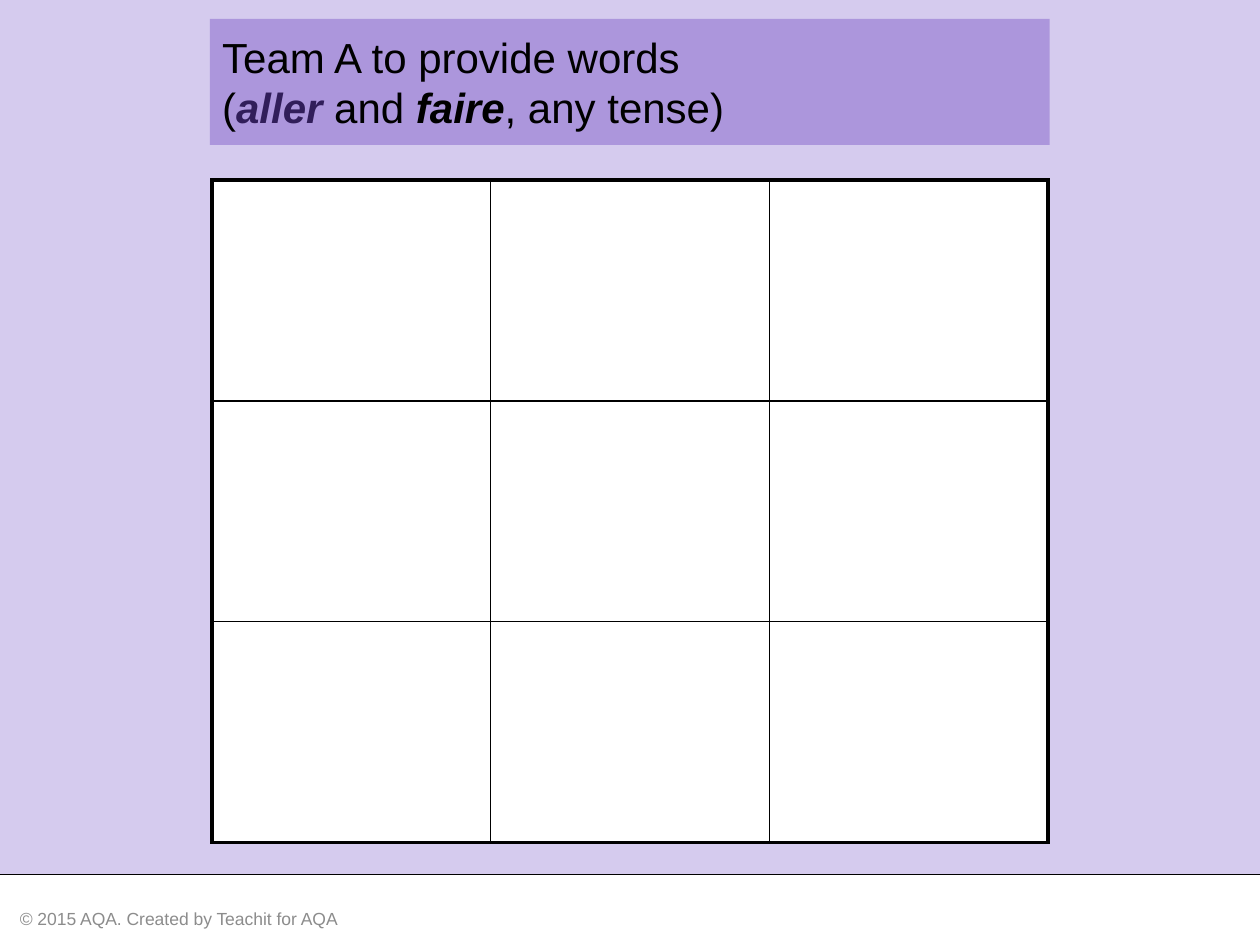
"""Build a noughts-and-crosses grid slide for a French verb game."""
from lxml.etree import SubElement
from pptx import Presentation
from pptx.dml.color import RGBColor
from pptx.enum.shapes import MSO_CONNECTOR as Connector, MSO_SHAPE as Shape
from pptx.enum.text import MSO_ANCHOR as Anchor, PP_ALIGN as Align
from pptx.oxml.ns import qn
from pptx.util import Cm, Pt

LILAC = RGBColor(0xD5, 0xCB, 0xEE)
PURPLE = RGBColor(0xAC, 0x96, 0xDC)
DARK_PURPLE = RGBColor(0x31, 0x1E, 0x5A)
BLACK = RGBColor(0, 0, 0)
WHITE = RGBColor(0xFF, 0xFF, 0xFF)
GREY = RGBColor(0x8C, 0x8C, 0x8C)

SIZE = 3
COL_WIDTH, ROW_HEIGHT = Cm(5.62), Cm(4.45)
FOOTER_TOP = Cm(17.63)
THIN, THICK = Pt(1), Pt(2.25)


def add_span(para, text, size, color, strong=False):
    span = para.add_run()
    span.text = text
    span.font.name = "Arial"
    span.font.size = Pt(size)
    span.font.color.rgb = color
    span.font.bold = span.font.italic = strong


def add_panel(left, top, width, height, color):
    panel = page.shapes.add_shape(Shape.RECTANGLE, left, top, width, height)
    panel.shadow.inherit = False
    panel.fill.solid()
    panel.fill.fore_color.rgb = color
    panel.line.fill.background()
    return panel


deck = Presentation()
deck.slide_width, deck.slide_height = Cm(25.4), Cm(19.05)
page = deck.slides.add_slide(deck.slide_layouts[6])
page.background.fill.solid()
page.background.fill.fore_color.rgb = LILAC

add_panel(0, FOOTER_TOP, deck.slide_width, deck.slide_height - FOOTER_TOP, WHITE)
rule = page.shapes.add_connector(
    Connector.STRAIGHT, 0, FOOTER_TOP, deck.slide_width, FOOTER_TOP)
rule.line.color.rgb = BLACK
rule.line.width = Pt(0.5)
SubElement(rule._element.spPr, qn("a:effectLst"))

footer = page.shapes.add_textbox(Cm(0.15), Cm(18.01), Cm(10.16), Cm(1.02)).text_frame
footer.word_wrap = True
footer.vertical_anchor = Anchor.MIDDLE
add_span(footer.paragraphs[0], "© 2015 AQA. Created by Teachit for AQA", 10, GREY)

title = add_panel(Cm(4.23), Cm(0.38), Cm(16.93), Cm(2.54), PURPLE).text_frame
title.word_wrap = True
title.vertical_anchor = Anchor.MIDDLE
title_lines = [
    [("Team A to provide words", BLACK, False)],
    [("(", BLACK, False), ("aller", DARK_PURPLE, True), (" and ", BLACK, False),
     ("faire", BLACK, True), (", any tense)", BLACK, False)],
]
for index, line in enumerate(title_lines):
    para = title.add_paragraph() if index else title.paragraphs[0]
    para.alignment = Align.LEFT
    for text, color, strong in line:
        add_span(para, text, 24, color, strong)

grid = page.shapes.add_table(
    SIZE, SIZE, Cm(4.27), Cm(3.63), SIZE * COL_WIDTH, SIZE * ROW_HEIGHT).table
grid.first_row = grid.horz_banding = False
for index in range(SIZE):
    grid.columns[index].width = COL_WIDTH
    grid.rows[index].height = ROW_HEIGHT
    for column in range(SIZE):
        cell = grid.cell(index, column)
        outer_sides = {
            "L": column == 0, "R": column == SIZE - 1,
            "T": index == 0, "B": index == SIZE - 1,
        }
        properties = cell._tc.get_or_add_tcPr()
        for side, outer in outer_sides.items():
            border = SubElement(
                properties, qn(f"a:ln{side}"), w=str(THICK if outer else THIN))
            fill = SubElement(border, qn("a:solidFill"))
            SubElement(fill, qn("a:srgbClr"), val=str(BLACK))
        cell.fill.solid()
        cell.fill.fore_color.rgb = WHITE

deck.save("out.pptx")
